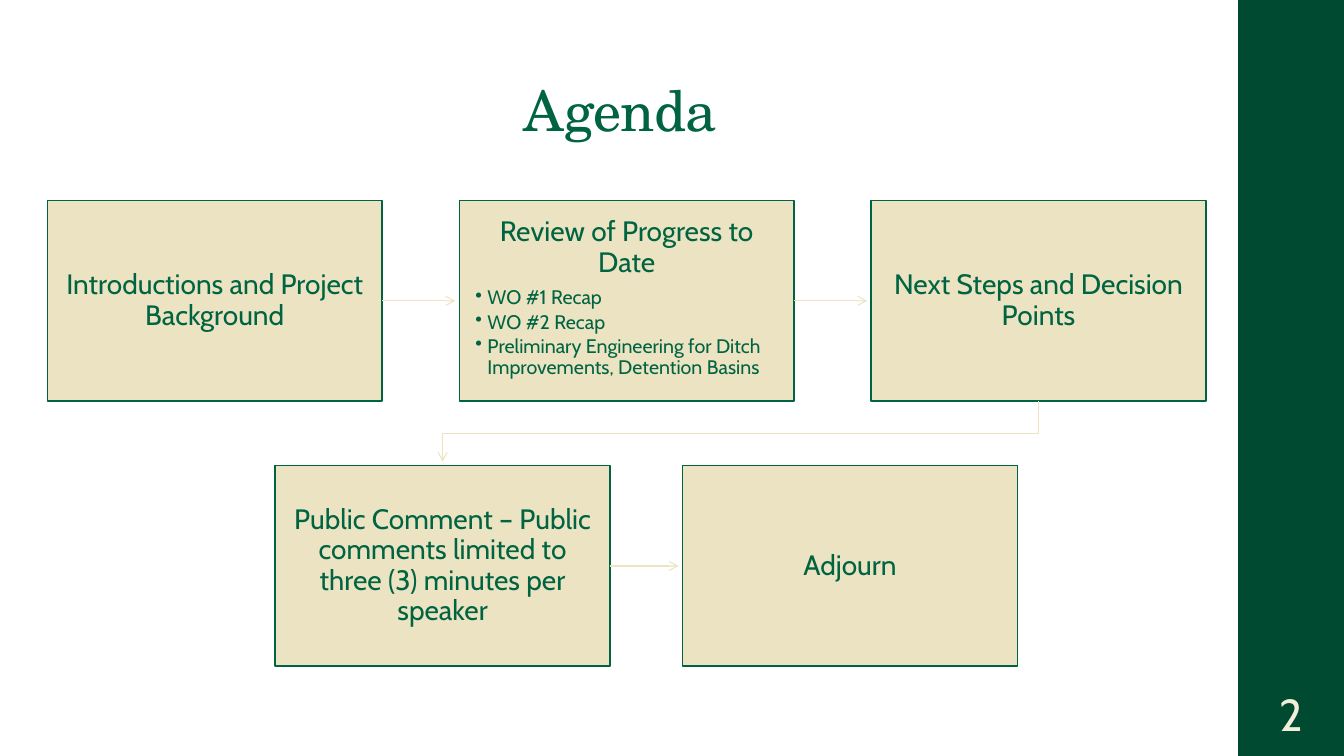
from dataclasses import dataclass

from lxml.etree import SubElement
from pptx import Presentation
from pptx.dml.color import RGBColor
from pptx.enum.shapes import MSO_CONNECTOR as Connector, MSO_SHAPE as Preset
from pptx.enum.text import MSO_ANCHOR as Anchor, MSO_AUTO_SIZE as AutoSize, PP_ALIGN as Align
from pptx.oxml.ns import qn
from pptx.util import Inches, Pt


@dataclass(frozen=True)
class Theme:
    """Colours, fonts and type sizes of the slide."""
    band: RGBColor = RGBColor.from_string("004A31")
    green: RGBColor = RGBColor.from_string("006341")
    sand: RGBColor = RGBColor.from_string("EBE3C1")
    cream: RGBColor = RGBColor.from_string("F3EEDA")
    heading_font: str = "TeX Gyre Schola"
    body_font: str = "Cabin"
    title_size: int = 40
    number_size: int = 32
    step_size: int = 20
    bullet_size: int = 14


THEME = Theme()
CARD_WIDTH, CARD_HEIGHT = 3.32, 1.99
ARROW_GAP = 0.04
ROWS = [
    (0.47, 1.99, 4.085, [
        ("Introductions and Project Background", []),
        ("Review of Progress to Date", [
            "WO #1 Recap",
            "WO #2 Recap",
            "Preliminary Engineering for Ditch Improvements, Detention Basins",
        ]),
        ("Next Steps and Decision Points", []),
    ]),
    (2.73, 4.62, 4.04, [
        ("Public Comment – Public comments limited to three (3) minutes per speaker", []),
        ("Adjourn", []),
    ]),
]


def write(para, text, *, size, color=THEME.green, font=THEME.body_font,
          align=Align.CENTER, line_spacing=0.9, after=0, bullet=False, tracking=None):
    """Fill a paragraph with one formatted span."""
    if bullet:
        para.level = 1
        props = para._p.get_or_add_pPr()
        props.set("marL", str(Inches(0.12)))
        props.set("indent", str(Inches(-0.12)))
    para.alignment = align
    para.line_spacing = line_spacing
    para.space_before = Pt(0)
    para.space_after = Pt(after)
    if bullet:
        SubElement(props, qn("a:buChar")).set("char", "•")
    span = para.add_run()
    span.text = text
    span.font.size = Pt(size)
    span.font.name = font
    span.font.color.rgb = color
    if tracking is not None:
        span._r.get_or_add_rPr().set("spc", str(tracking))


def set_frame(frame, anchor, side, end):
    """Set wrapping, anchor and margins of a text frame."""
    frame.word_wrap = True
    frame.auto_size = AutoSize.NONE
    frame.vertical_anchor = anchor
    frame.margin_left = frame.margin_right = Inches(side)
    frame.margin_top = frame.margin_bottom = Inches(end)


def add_box(page, left, top, width, height, fill, line=None):
    """Add a flat rectangle."""
    box = page.shapes.add_shape(
        Preset.RECTANGLE, Inches(left), Inches(top), Inches(width), Inches(height))
    box.shadow.inherit = False
    box.fill.solid()
    box.fill.fore_color.rgb = fill
    if line is None:
        box.line.fill.background()
    else:
        box.line.color.rgb = line
        box.line.width = Pt(1.1)
    return box


def add_card(page, left, top, heading, bullets):
    """Add an agenda step with its heading and any bullets."""
    card = add_box(page, left, top, CARD_WIDTH, CARD_HEIGHT, THEME.sand, THEME.green)
    frame = card.text_frame
    set_frame(frame, Anchor.TOP if bullets else Anchor.MIDDLE, 0.16, 0.17)
    write(frame.paragraphs[0], heading, size=THEME.step_size, after=7)
    for item in bullets:
        write(frame.add_paragraph(), item, size=THEME.bullet_size,
              align=Align.LEFT, after=2.1, bullet=True)
    return card


def style_arrow(arrow):
    """Give a line its colour, width and open arrowhead."""
    arrow.line.color.rgb = THEME.sand
    arrow.line.width = Pt(0.75)
    SubElement(arrow.line._get_or_add_ln(), qn("a:tailEnd")).set("type", "arrow")


def add_arrow(page, source, target):
    """Add a straight arrow from one card towards the next in its row."""
    middle = source.top + source.height // 2
    arrow = page.shapes.add_connector(
        Connector.STRAIGHT, source.left + source.width, middle,
        target.left - Inches(ARROW_GAP), middle)
    arrow.begin_connect(source, 3)
    style_arrow(arrow)
    SubElement(arrow._element.spPr, qn("a:effectLst"))


def add_turn(page, source, target):
    """Add a bent arrow from the end of one row to the start of the next."""
    start, end = (card.left + card.width // 2 for card in (source, target))
    bottom = source.top + source.height
    middle = (bottom + target.top) // 2
    builder = page.shapes.build_freeform(start, bottom)
    builder.add_line_segments(
        [(start, middle), (end, middle), (end, target.top - Inches(ARROW_GAP))], close=False)
    arrow = builder.convert_to_shape()
    arrow.shadow.inherit = False
    arrow.fill.background()
    style_arrow(arrow)


def add_title(page, text):
    """Place and fill the title placeholder."""
    title = page.shapes.title
    title.left, title.top = Inches(0.32), Inches(0.4)
    title.width, title.height = Inches(11.66), Inches(1.45)
    set_frame(title.text_frame, Anchor.MIDDLE, 0.1, 0.05)
    write(title.text_frame.paragraphs[0], text, size=THEME.title_size,
          font=THEME.heading_font, tracking=-50)


def add_page_number(page, text):
    """Add the page number on the side band."""
    box = page.shapes.add_textbox(Inches(12.31), Inches(6.75), Inches(1), Inches(0.65))
    set_frame(box.text_frame, Anchor.MIDDLE, 0.03, 0.05)
    write(box.text_frame.paragraphs[0], text, size=THEME.number_size,
          color=THEME.cream, line_spacing=1.0)


def main():
    """Build the agenda slide."""
    deck = Presentation()
    deck.slide_width, deck.slide_height = Inches(13.33), Inches(7.5)
    page = deck.slides.add_slide(deck.slide_layouts[5])
    add_box(page, 12.28, 0, 1.05, 7.5, THEME.band)
    add_title(page, "Agenda")
    rows = [
        [add_card(page, left + index * pitch, top, heading, bullets)
         for index, (heading, bullets) in enumerate(steps)]
        for left, top, pitch, steps in ROWS
    ]
    for cards in rows:
        for source, target in zip(cards, cards[1:]):
            add_arrow(page, source, target)
    add_turn(page, rows[0][-1], rows[1][0])
    add_page_number(page, "2")
    deck.save("out.pptx")


if __name__ == "__main__":
    main()
